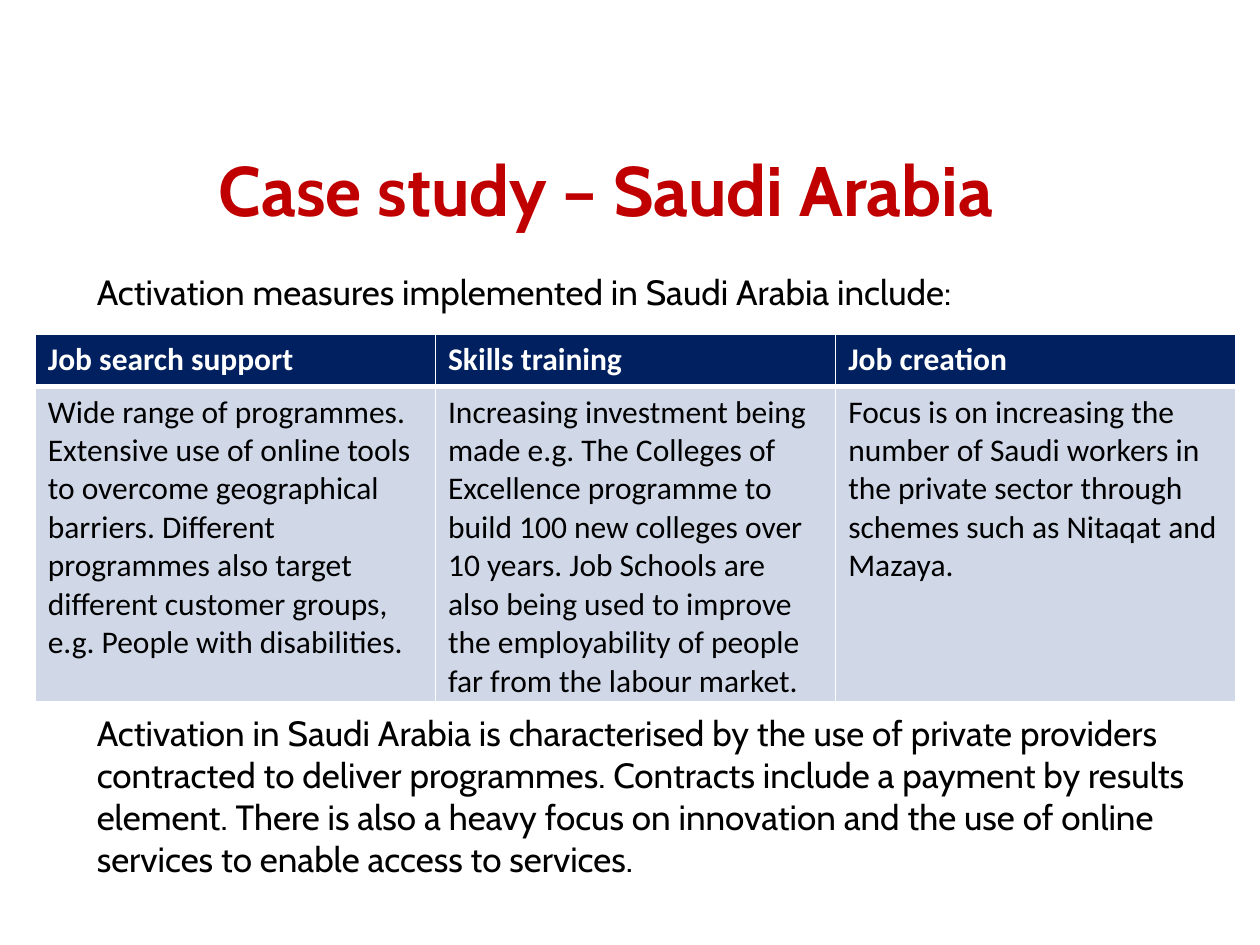
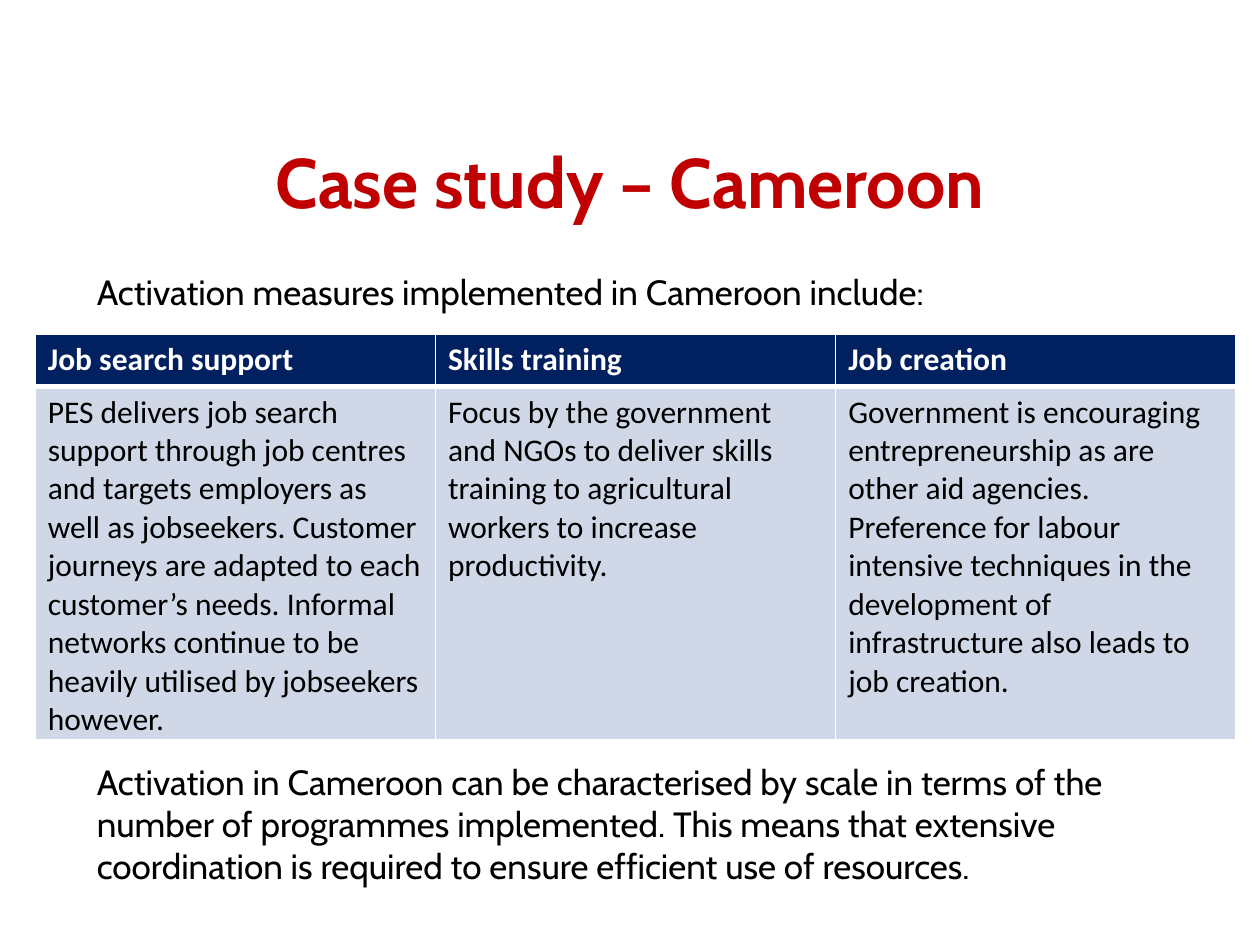
from lxml.etree import SubElement
from pptx import Presentation
from pptx.dml.color import RGBColor
from pptx.enum.text import MSO_ANCHOR as Anchor, MSO_AUTO_SIZE as AutoSize, PP_ALIGN as Align
from pptx.oxml import parse_xml
from pptx.oxml.ns import nsdecls, qn
from pptx.util import Inches, Pt

WIDTH, HEIGHT = 10, 7.5
RED, NAVY, PALE, WHITE, BLACK = "C00000", "002060", "D0D8E8", "FFFFFF", "000000"
HEADINGS = ["Job search support", "Skills training", "Job creation"]


def color(code):
    return RGBColor.from_string(code)


class CaseStudy:
    """Shared style and the slide being built; lengths are grid units of 1/100 slide."""

    text_font, table_font = "Cabin", "Calibri"
    table_left, table_top, table_width = 2.8, 35.33, 95.3
    header_height = 5.6

    def __init__(self, deck):
        self.deck = deck
        self.page = None

    def new_page(self):
        self.page = self.deck.slides.add_slide(self.deck.slide_layouts[5])

    def area(self, left, top, width, height):
        across, down = WIDTH / 100, HEIGHT / 100
        return (Inches(left * across), Inches(top * down),
                Inches(width * across), Inches(height * down))

    def style(self, para, font, size, code, bold=False):
        para.font.name, para.font.size, para.font.bold = font, Pt(size), bold
        para.font.color.rgb = color(code)

    def title(self, text, *place):
        box = self.page.shapes.title
        box.left, box.top, box.width, box.height = self.area(*place)
        frame = box.text_frame
        frame.text = text
        frame.word_wrap, frame.auto_size = True, AutoSize.NONE
        frame.vertical_anchor = Anchor.MIDDLE
        para = frame.paragraphs[0]
        para.alignment = Align.CENTER
        self.style(para, self.text_font, 40, RED, True)

    def body(self, intro, summary, gap):
        """Intro above the table and summary below it, parted by gap points."""
        frame = self.page.shapes.add_textbox(*self.area(6.7, 28, 90, 49.73)).text_frame
        frame.word_wrap = True
        frame.text = f"{intro}\n{summary}"
        for para in frame.paragraphs:
            self.style(para, self.text_font, 20, BLACK)
        frame.paragraphs[1].space_before = Pt(gap)

    def borders(self, cell, top, bottom):
        props = cell._tc.get_or_add_tcPr()
        for index, (side, width) in enumerate(
                [("L", 1), ("R", 1), ("T", top), ("B", bottom)]):
            line = parse_xml(f'<a:ln{side} {nsdecls("a")} w="{Pt(width)}"/>')
            fill = SubElement(line, qn("a:solidFill"))
            SubElement(fill, qn("a:srgbClr"), val=WHITE)
            props.insert(index, line)

    def table(self, measures, body_height):
        rows = [HEADINGS, measures]
        heights = [self.header_height, body_height]
        place = self.area(self.table_left, self.table_top, self.table_width, sum(heights))
        grid = self.page.shapes.add_table(2, len(HEADINGS), *place).table
        grid.horz_banding = False
        for row, height in zip(grid.rows, heights):
            row.height = Inches(height * HEIGHT / 100)
        looks = [(NAVY, WHITE, True, 1, 3), (PALE, BLACK, False, 3, 1)]
        for r, (texts, look) in enumerate(zip(rows, looks)):
            back, ink, bold, top, bottom = look
            for c, text in enumerate(texts):
                cell = grid.cell(r, c)
                cell.text = text
                cell.fill.solid()
                cell.fill.fore_color.rgb = color(back)
                self.borders(cell, top, bottom)
                for para in cell.text_frame.paragraphs:
                    self.style(para, self.table_font, 18, ink, bold)


def main():
    deck = Presentation()
    deck.slide_width, deck.slide_height = Inches(WIDTH), Inches(HEIGHT)
    study = CaseStudy(deck)

    # Saudi Arabia
    study.new_page()
    study.title("Case study – Saudi Arabia", 3.1, 15.33, 90, 9.33)
    study.body(
        "Activation measures implemented in Saudi Arabia include:",
        "Activation in Saudi Arabia is characterised by the use of private providers "
        "contracted to deliver programmes. Contracts include a payment by results element. "
        "There is also a heavy focus on innovation and the use of online services to enable "
        "access to services.", gap=228)
    study.table([
        "Wide range of programmes. Extensive use of online tools to overcome geographical "
        "barriers. Different programmes also target different customer groups, e.g. People "
        "with disabilities.",
        "Increasing investment being made e.g. The Colleges of Excellence programme to build "
        "100 new colleges over 10 years. Job Schools are also being used to improve the "
        "employability of people far from the labour market.",
        "Focus is on increasing the number of Saudi workers in the private sector through "
        "schemes such as Nitaqat and\nMazaya."], body_height=33.33)

    # Cameroon
    study.new_page()
    study.title("Case study – Cameroon", 7.5, 9.2, 85, 19.87)
    study.body(
        "Activation measures implemented in Cameroon include:",
        "Activation in Cameroon can be characterised by scale in terms of the number of "
        "programmes implemented. This means that extensive coordination is required to ensure "
        "efficient use of resources.", gap=256)
    study.table([
        "PES delivers job search support through job centres and targets employers as well as "
        "jobseekers. Customer journeys are adapted to each customer’s needs. Informal networks "
        "continue to be heavily utilised by jobseekers however.",
        "Focus by the government and NGOs to deliver skills training to agricultural workers "
        "to increase productivity.",
        "Government is encouraging entrepreneurship as are other aid agencies. Preference for "
        "labour intensive techniques in the development of infrastructure also leads to job "
        "creation."], body_height=37.33)

    deck.save("out.pptx")


if __name__ == "__main__":
    main()
